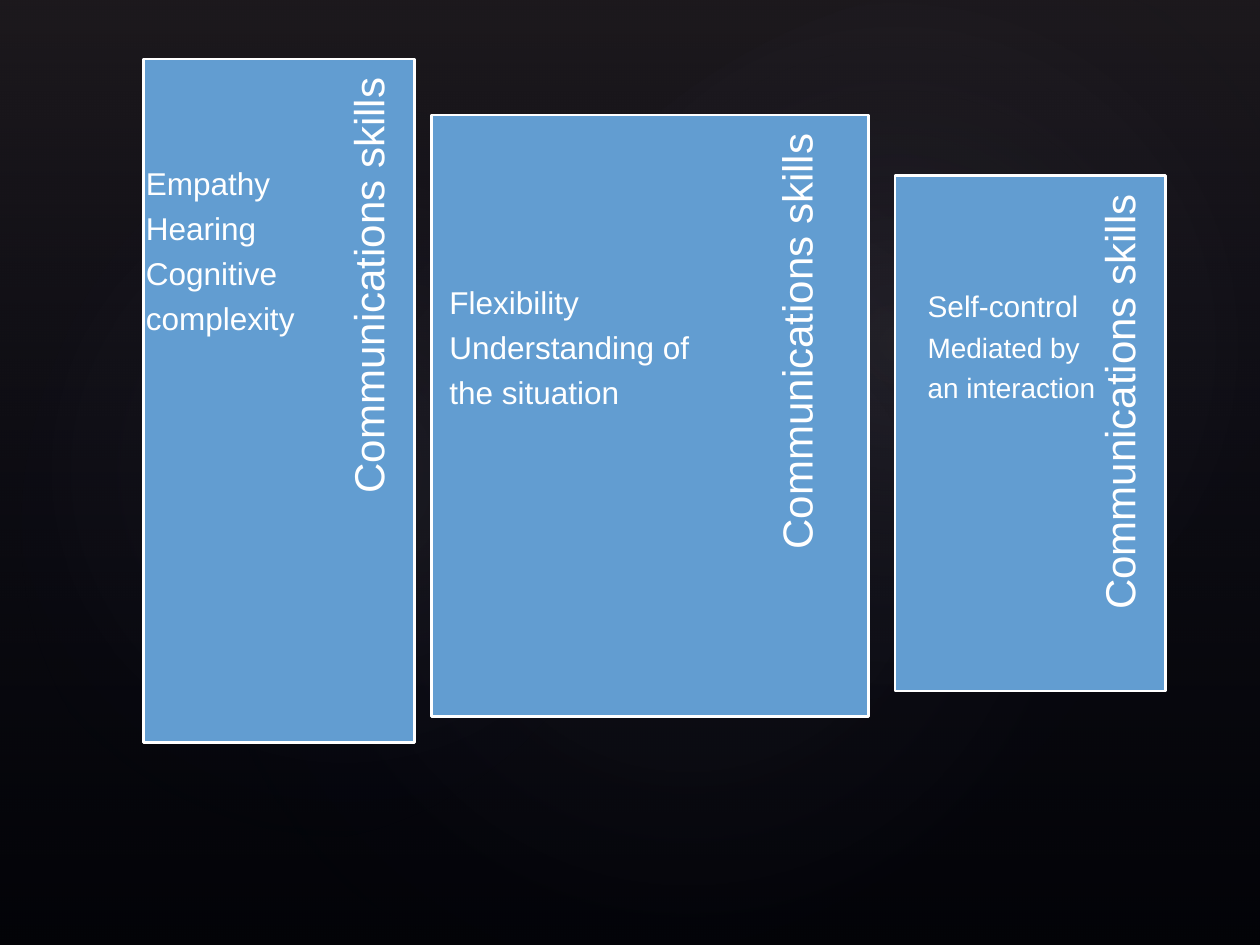
from pptx import Presentation
from pptx.dml.color import RGBColor
from pptx.enum.shapes import MSO_SHAPE
from pptx.enum.text import MSO_ANCHOR, PP_ALIGN
from pptx.oxml import parse_xml
from pptx.oxml.ns import nsdecls
from pptx.util import Cm, Pt

COLORS = {
    "background": "000000",
    "haze": "504652",
    "navy": "242852",
    "glow": "C4BCC6",
    "panel": "629DD1",
    "light": "FFFFFF",
}
FONT = "Arial"
SLIDE_SIZE = (25.4, 19.05)

# Left, top, width, height, rotation and centre opacity in percent
GLOWS = [
    (3.81, 2.9, 20.12, 15.85, 328.7, 7),
    (-0.76, 3.25, 15.39, 12.45, 294.3, 8),
    (9.09, 0.33, 18.01, 13.21, 328.7, 8),
]
PANELS = [
    (18.04, 3.54, 5.46, 10.39),
    (8.7, 2.32, 8.81, 12.13),
    (2.9, 1.19, 5.46, 13.78),
]
PANEL_TITLE = "Communications skills"

# Box, inset, space after in points, lines with their sizes
SKILL_LISTS = [
    ((2.79, 3.24, 5.46, 11.67), 0.15, 6.3,
     [("Empathy", 18), ("Hearing", 18), ("Cognitive", 18), ("complexity", 18)]),
    ((8.88, 5.62, 7.44, 9.74), 0.18, 6.3,
     [("Flexibility", 18), ("Understanding of", 18), ("the situation", 18)]),
    ((18.52, 5.7, 4.85, 7.79), 0.18, 5.9,
     [("Self-control", 17), ("Mediated by", 16), ("an interaction", 16)]),
]


def rgb(name):
    return RGBColor.from_string(COLORS[name])


def lengths(box):
    return [Cm(value) for value in box]


def set_all(target, values):
    for name, value in values.items():
        setattr(target, name, value)


def add_plain_shape(slide, kind, box):
    shape = slide.shapes.add_shape(kind, *lengths(box))
    shape.shadow.inherit = False
    return shape


def add_gradient_shape(slide, kind, box, stops, direction, rotation=0):
    """Add a borderless shape; stops are (position, colour, opacity) in percent."""
    shape = add_plain_shape(slide, kind, box)
    shape.rotation = rotation
    shape.line.fill.background()
    stop_xml = "".join(
        f'<a:gs pos="{position * 1000}"><a:srgbClr val="{COLORS[color]}">'
        f'<a:alpha val="{opacity * 1000}"/></a:srgbClr></a:gs>'
        for position, color, opacity in stops)
    gradient = parse_xml(
        f'<a:gradFill {nsdecls("a")} rotWithShape="1">'
        f"<a:gsLst>{stop_xml}</a:gsLst>{direction}</a:gradFill>")
    shape._element.spPr.insert(2, gradient)


def add_backdrop(slide):
    slide.background.fill.solid()
    slide.background.fill.fore_color.rgb = rgb("background")
    add_gradient_shape(slide, MSO_SHAPE.RECTANGLE, (0, 0, *SLIDE_SIZE),
                       [(0, "haze", 36), (100, "navy", 10)],
                       '<a:lin ang="5400000" scaled="0"/>')
    radial = ('<a:path path="circle"><a:fillToRect l="50000" t="50000" '
              'r="50000" b="50000"/></a:path>')
    for *box, rotation, opacity in GLOWS:
        add_gradient_shape(slide, MSO_SHAPE.OVAL, box,
                           [(0, "glow", opacity), (58, "navy", 0)],
                           radial, rotation)


def add_text(slide, box, lines, frame_format, paragraph_format):
    text_box = slide.shapes.add_textbox(*lengths(box))
    frame = text_box.text_frame
    set_all(frame, {"word_wrap": True, **frame_format})
    for index, (text, size) in enumerate(lines):
        paragraph = frame.add_paragraph() if index else frame.paragraphs[0]
        set_all(paragraph, {"line_spacing": 0.9, **paragraph_format})
        run = paragraph.add_run()
        run.text = text
        set_all(run.font, {"name": FONT, "size": Pt(size)})
        run.font.color.rgb = rgb("light")
    return text_box


def add_panel(slide, box):
    """Add a panel with its title running up the right-hand side."""
    panel = add_plain_shape(slide, MSO_SHAPE.RECTANGLE, box)
    panel.fill.solid()
    panel.fill.fore_color.rgb = rgb("panel")
    panel.line.color.rgb = rgb("light")
    panel.line.width = Pt(1.5)

    left, top, width, height = box
    length, thickness = 0.9 * height, 0.26 * width
    center_x = left + 0.845 * width
    center_y = top + length / 2
    title_box = (center_x - length / 2, center_y - thickness / 2,
                 length, thickness)
    title = add_text(
        slide, title_box, [(PANEL_TITLE, 24)],
        {"vertical_anchor": MSO_ANCHOR.MIDDLE, "margin_left": Cm(0.25),
         "margin_top": 0, "margin_right": Cm(0.38), "margin_bottom": Cm(0.08)},
        {"alignment": PP_ALIGN.RIGHT})
    title.rotation = 270


def add_skill_list(slide, box, inset, space_after, lines):
    sides = ("left", "top", "right", "bottom")
    add_text(
        slide, box, lines,
        {f"margin_{side}": Cm(inset) for side in sides},
        {"alignment": PP_ALIGN.LEFT, "space_after": Pt(space_after)})


def main():
    presentation = Presentation()
    presentation.slide_width, presentation.slide_height = lengths(SLIDE_SIZE)
    slide = presentation.slides.add_slide(presentation.slide_layouts[6])
    add_backdrop(slide)
    for panel in PANELS:
        add_panel(slide, panel)
    for skill_list in SKILL_LISTS:
        add_skill_list(slide, *skill_list)
    presentation.save("out.pptx")


if __name__ == "__main__":
    main()
